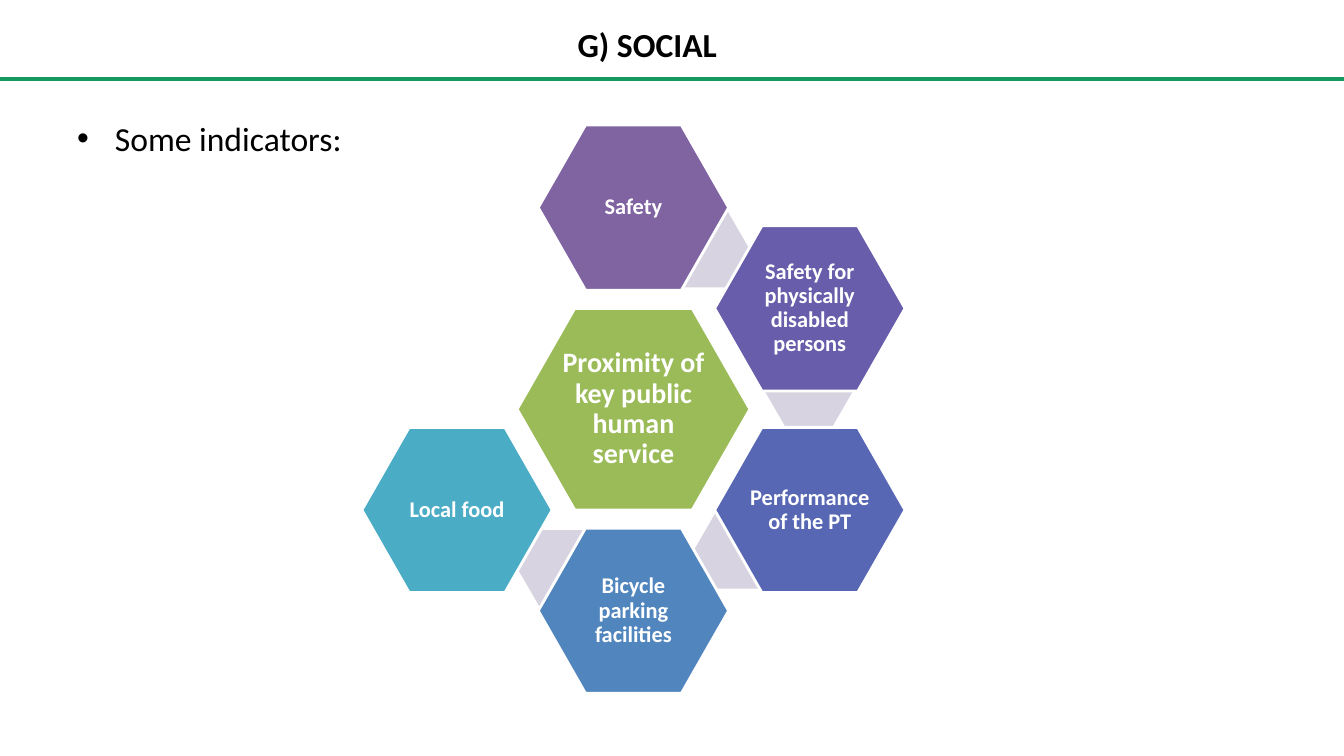
"""Build the slide on social indicators with its hexagon cluster."""
import pptx
import pptx.dml.color
import pptx.enum.shapes
import pptx.enum.text
import pptx.oxml
import pptx.oxml.ns
import pptx.util

Pt = pptx.util.Pt
COLOURS = {
    "text": "000000", "white": "FFFFFF", "rule": "159961", "link": "D8D3E0",
    "proximity": "9BBB59", "safety": "8064A2", "disabled": "685DAB",
    "transport": "5767B4", "bicycle": "5185BD", "food": "4BACC6",
}
CENTRE_X, CENTRE_Y = 452.5, 292.3
COLUMN_STEP, ROW_STEP = 126, 72
CORE_SIZE = (166.3, 144)
INDICATOR_SIZE = (136, 118)
LINK_SIZE = (62.6, 54)
INDICATORS = [
    ("Safety", "safety", 0, -2),
    ("Safety for physically disabled persons", "disabled", 1, -1),
    ("Performance of the PT", "transport", 1, 1),
    ("Bicycle parking facilities", "bicycle", 0, 2),
    ("Local food", "food", -1, 1),
]
LINKS = [(51.8, -114), (125.3, -12.6), (74.2, 101.2), (-51.8, 113.4)]


def colour(name):
    return pptx.dml.color.RGBColor.from_string(COLOURS[name])


def add_run(paragraph, words, size, colour_name, bold):
    run = paragraph.add_run()
    run.text = words
    run.font.name = "Calibri"
    run.font.size = Pt(size)
    run.font.bold = bold
    run.font.color.rgb = colour(colour_name)


def add_title(slide, words):
    title = slide.shapes.title
    title.left, title.top = Pt(73.5), Pt(0)
    title.width, title.height = Pt(777.6), Pt(63.4)
    title.text_frame.vertical_anchor = pptx.enum.text.MSO_ANCHOR.MIDDLE
    heading = title.text_frame.paragraphs[0]
    heading.alignment = pptx.enum.text.PP_ALIGN.CENTER
    add_run(heading, words, 24, "text", True)


def add_rule(slide, y):
    rule = slide.shapes.add_connector(
        pptx.enum.shapes.MSO_CONNECTOR.STRAIGHT, Pt(0), Pt(y), Pt(960), Pt(y))
    rule.line.color.rgb = colour("rule")
    rule.line.width = Pt(3)
    properties = rule.element.spPr
    properties.append(pptx.oxml.parse_xml(
        "<a:effectLst %s/>" % pptx.oxml.ns.nsdecls("a")))


def add_bullet(slide, words):
    body = slide.shapes.add_textbox(Pt(48), Pt(80.8), Pt(864), Pt(388))
    body.text_frame.word_wrap = True
    point = body.text_frame.paragraphs[0]
    properties = point._p.get_or_add_pPr()
    properties.set("marL", str(Pt(27)))
    properties.set("indent", str(-Pt(27)))
    for markup in ('<a:buFont %s typeface="Arial"/>', '<a:buChar %s char="•"/>'):
        properties.append(pptx.oxml.parse_xml(
            markup % pptx.oxml.ns.nsdecls("a")))
    add_run(point, words, 24, "text", False)


def add_hexagon(slide, dx, dy, size, fill, adjustment):
    width, height = size
    hexagon = slide.shapes.add_shape(
        pptx.enum.shapes.MSO_SHAPE.HEXAGON,
        Pt(CENTRE_X + dx - width / 2), Pt(CENTRE_Y + dy - height / 2),
        Pt(width), Pt(height))
    hexagon.adjustments[0] = adjustment
    hexagon.shadow.inherit = False
    hexagon.fill.solid()
    hexagon.fill.fore_color.rgb = colour(fill)
    hexagon.line.fill.background()
    return hexagon


def add_labelled_hexagon(slide, dx, dy, size, fill, words, font_size):
    hexagon = add_hexagon(slide, dx, dy, size, fill, 0.286)
    hexagon.line.color.rgb = colour("white")
    hexagon.line.width = Pt(2)
    frame = hexagon.text_frame
    frame.word_wrap = True
    frame.vertical_anchor = pptx.enum.text.MSO_ANCHOR.MIDDLE
    frame.margin_left = frame.margin_right = Pt(font_size / 10)
    frame.margin_top = frame.margin_bottom = Pt(font_size / 10)
    label = frame.paragraphs[0]
    label.alignment = pptx.enum.text.PP_ALIGN.CENTER
    label.line_spacing = 0.9
    add_run(label, words, font_size, "white", True)


def main():
    deck = pptx.Presentation()
    deck.slide_width, deck.slide_height = Pt(960), Pt(540)
    slide = deck.slides.add_slide(deck.slide_layouts[5])
    add_rule(slide, 56.7)
    add_title(slide, "G) SOCIAL")
    add_bullet(slide, "Some indicators:")
    add_labelled_hexagon(slide, 0, 0, CORE_SIZE, "proximity",
                         "Proximity of key public human service", 20)
    for dx, dy in LINKS:
        add_hexagon(slide, dx, dy, LINK_SIZE, "link", 0.289)
    for words, fill, column, row in INDICATORS:
        add_labelled_hexagon(slide, column * COLUMN_STEP, row * ROW_STEP,
                             INDICATOR_SIZE, fill, words, 16)
    deck.save("out.pptx")


if __name__ == "__main__":
    main()
